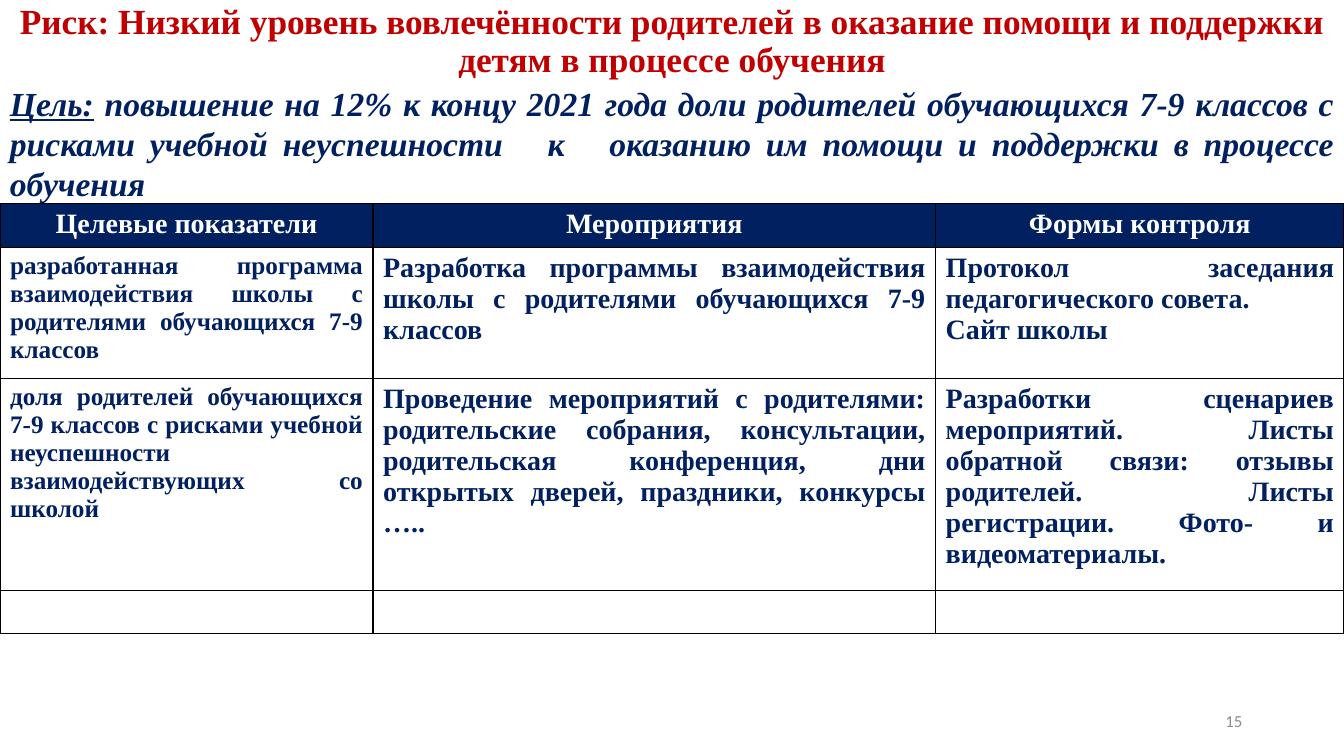
"""Build the slide on the risk of low parental involvement, with its goal and action table."""
from lxml.etree import SubElement
from pptx import Presentation
from pptx.dml.color import RGBColor
from pptx.enum.text import MSO_ANCHOR, MSO_AUTO_SIZE, PP_ALIGN
from pptx.oxml.ns import qn
from pptx.util import Inches, Pt

COLORS = {"risk": "C00000", "navy": "002060", "white": "FFFFFF", "border": "000000", "number": "8C8C8C"}
SERIF = "Times New Roman"

RISK = "Риск: Низкий уровень вовлечённости родителей в оказание помощи и поддержки детям в процессе обучения"
GOAL_LABEL = "Цель:"
GOAL = (" повышение на 12% к концу 2021 года доли родителей обучающихся 7-9 классов с рисками учебной "
        "неуспешности   к   оказанию им помощи и поддержки в процессе обучения")
PAGE_NUMBER = "15"
ACTIONS = [
    ("Целевые показатели", "Мероприятия", "Формы контроля"),
    ("разработанная программа взаимодействия школы с родителями обучающихся 7-9 классов",
     "Разработка программы взаимодействия школы с родителями обучающихся 7-9 классов",
     "Протокол заседания педагогического совета.\nСайт школы"),
    ("доля родителей обучающихся 7-9 классов с рисками учебной неуспешности взаимодействующих со школой",
     "Проведение мероприятий с родителями: родительские собрания, консультации, родительская конференция, "
     "дни открытых дверей, праздники, конкурсы …..",
     "Разработки сценариев мероприятий. Листы обратной связи: отзывы родителей. Листы регистрации. "
     "Фото- и видеоматериалы."),
    ("", "", ""),
]
COLUMN_WIDTHS = (3.7, 5.58, 4.05)
ROW_HEIGHTS = (0.43, 1.3, 2.1, 0.43)
SLIDE_WIDTH = sum(COLUMN_WIDTHS)


def box(left, top, width, height):
    return [Inches(value) for value in (left, top, width, height)]


def format_text(frame, size, color, align, font=SERIF, bold=True, italic=False):
    for paragraph in frame.paragraphs:
        paragraph.alignment = align
        for run in paragraph.runs:
            run.font.name = font
            run.font.size = Pt(size)
            run.font.bold = bold
            run.font.italic = italic
            run.font.color.rgb = RGBColor.from_string(COLORS[color])


def add_borders(cell):
    properties = cell._tc.get_or_add_tcPr()
    for side in ("L", "R", "T", "B"):
        line = SubElement(properties, qn(f"a:ln{side}"), w=str(Pt(1)))
        fill = SubElement(line, qn("a:solidFill"))
        SubElement(fill, qn("a:srgbClr"), val=COLORS["border"])


def add_risk(slide):
    risk = slide.shapes.title
    risk.left, risk.top, risk.width, risk.height = box(0, 0.01, SLIDE_WIDTH, 0.82)
    frame = risk.text_frame
    frame.text = RISK
    frame.word_wrap = True
    frame.auto_size = MSO_AUTO_SIZE.NONE
    frame.vertical_anchor = MSO_ANCHOR.MIDDLE
    frame.paragraphs[0].line_spacing = 0.9
    format_text(frame, 25.2, "risk", PP_ALIGN.CENTER)


def add_goal(slide):
    frame = slide.shapes.add_textbox(*box(0, 0.77, SLIDE_WIDTH, 1.31)).text_frame
    frame.word_wrap = True
    paragraph = frame.paragraphs[0]
    for text in (GOAL_LABEL, GOAL):
        paragraph.add_run().text = text
    format_text(frame, 24, "navy", PP_ALIGN.JUSTIFY, italic=True)
    paragraph.runs[0].font.underline = True


def add_actions(slide):
    place = box(0, 2.02, SLIDE_WIDTH, sum(ROW_HEIGHTS))
    table = slide.shapes.add_table(len(ACTIONS), len(COLUMN_WIDTHS), *place).table
    for column, width in zip(table.columns, COLUMN_WIDTHS):
        column.width = Inches(width)
    for row, height in zip(table.rows, ROW_HEIGHTS):
        row.height = Inches(height)
    for r, texts in enumerate(ACTIONS):
        header = r == 0
        for c, text in enumerate(texts):
            cell = table.cell(r, c)
            cell.text_frame.text = text
            size = 18 if c == 0 and not header else 20
            format_text(cell.text_frame, size, "white" if header else "navy",
                        PP_ALIGN.CENTER if header else PP_ALIGN.JUSTIFY)
            add_borders(cell)
            cell.fill.solid()
            cell.fill.fore_color.rgb = RGBColor.from_string(COLORS["navy" if header else "white"])


def add_page_number(slide):
    frame = slide.shapes.add_textbox(*box(9.42, 6.95, 3, 0.4)).text_frame
    frame.text = PAGE_NUMBER
    frame.word_wrap = True
    frame.vertical_anchor = MSO_ANCHOR.MIDDLE
    format_text(frame, 12, "number", PP_ALIGN.RIGHT, font="Calibri", bold=False)


def main():
    deck = Presentation()
    deck.slide_width, deck.slide_height = Inches(SLIDE_WIDTH), Inches(7.5)
    slide = deck.slides.add_slide(deck.slide_layouts[5])
    add_risk(slide)
    add_goal(slide)
    add_actions(slide)
    add_page_number(slide)
    deck.save("out.pptx")


if __name__ == "__main__":
    main()
